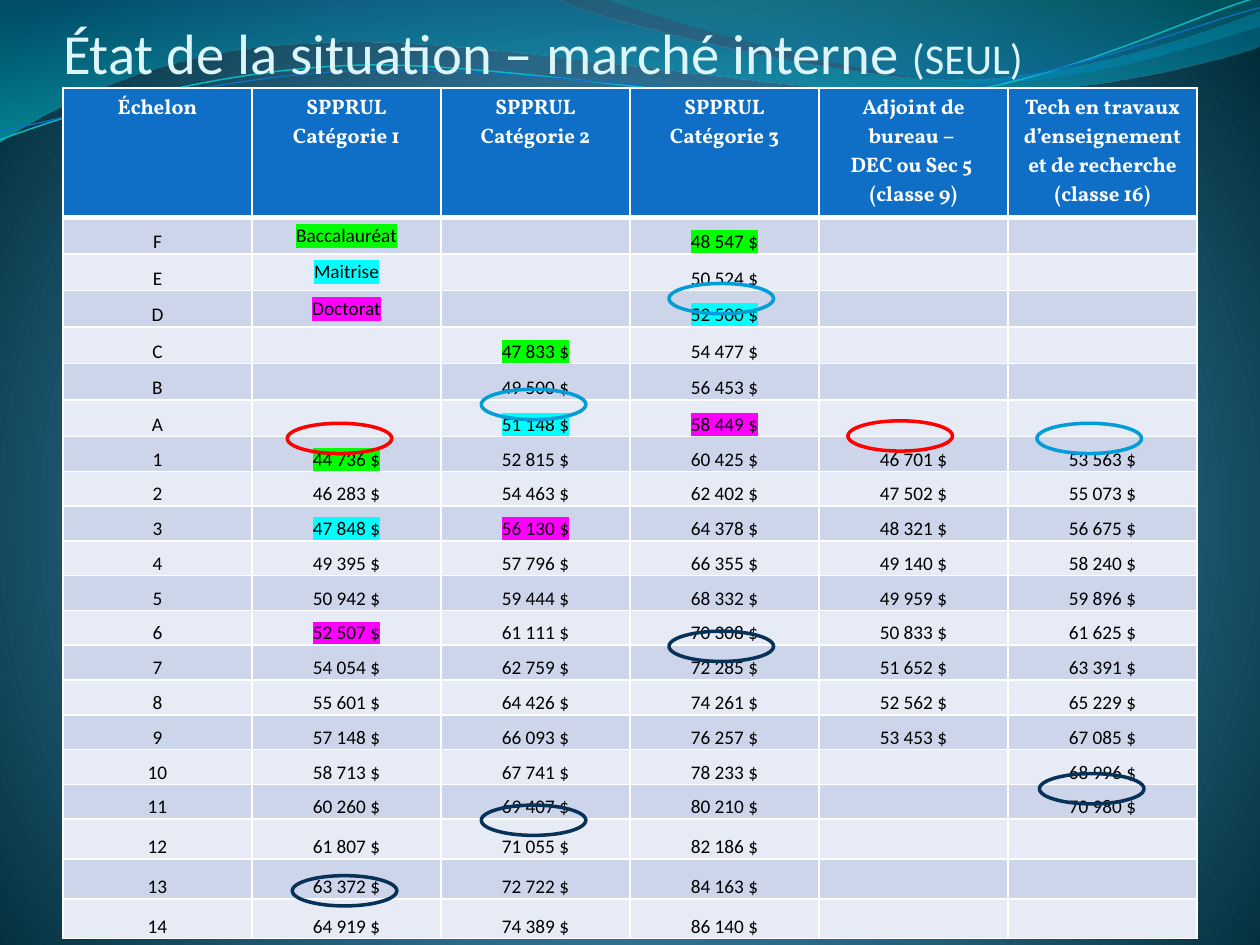
from lxml import etree
from pptx import Presentation
from pptx.dml.color import RGBColor
from pptx.enum.shapes import MSO_SHAPE
from pptx.enum.text import MSO_ANCHOR, PP_ALIGN
from pptx.oxml import parse_xml
from pptx.oxml.ns import nsdecls, qn
from pptx.util import Inches, Pt

WHITE = RGBColor(0xFF, 0xFF, 0xFF)
BLACK = RGBColor(0, 0, 0)
TITLE_COLOR = RGBColor(0xDB, 0xF5, 0xF9)
HEADER_BLUE = RGBColor(0x0F, 0x6F, 0xC6)
BANDS = [RGBColor(0xE7, 0xEB, 0xF5), RGBColor(0xCC, 0xD5, 0xEA)]
TEAL = RGBColor(0x0A, 0xB8, 0xBF)
NAVY = RGBColor(0x07, 0x31, 0x57)
RED = RGBColor(0xFF, 0, 0)
SKY = RGBColor(0, 0x9D, 0xD9)
GREEN = RGBColor(0, 0xFF, 0)
CYAN = RGBColor(0, 0xFF, 0xFF)
MAGENTA = RGBColor(0xFF, 0, 0xFF)

TITLE = [("État de la situation – marché interne ", 32.4), ("(SEUL)", 24.3)]
HEADERS = [
    "Échelon", "SPPRUL\nCatégorie 1", "SPPRUL\nCatégorie 2", "SPPRUL\nCatégorie 3",
    "Adjoint de bureau – \nDEC ou Sec 5 \n(classe 9)",
    "Tech en travaux d’enseignement et de recherche (classe 16)",
]
STEPS = list("FEDCBA") + [str(number) for number in range(1, 15)]
LEGEND = [("Baccalauréat", GREEN), ("Maitrise", CYAN), ("Doctorat", MAGENTA)]
# Column: (first step, salaries)
SALARIES = {
    1: ("1", ["44 736", "46 283", "47 848", "49 395", "50 942", "52 507", "54 054",
              "55 601", "57 148", "58 713", "60 260", "61 807", "63 372", "64 919"]),
    2: ("C", ["47 833", "49 500", "51 148", "52 815", "54 463", "56 130", "57 796",
              "59 444", "61 111", "62 759", "64 426", "66 093", "67 741", "69 407",
              "71 055", "72 722", "74 389"]),
    3: ("F", ["48 547", "50 524", "52 500", "54 477", "56 453", "58 449", "60 425",
              "62 402", "64 378", "66 355", "68 332", "70 308", "72 285", "74 261",
              "76 257", "78 233", "80 210", "82 186", "84 163", "86 140"]),
    4: ("1", ["46 701", "47 502", "48 321", "49 140", "49 959", "50 833", "51 652",
              "52 562", "53 453"]),
    5: ("1", ["53 563", "55 073", "56 675", "58 240", "59 896", "61 625", "63 391",
              "65 229", "67 085", "68 996", "70 980"]),
}
# Column: entry step of each diploma
DIPLOMA_STEPS = {
    1: {"1": GREEN, "3": CYAN, "6": MAGENTA},
    2: {"C": GREEN, "A": CYAN, "3": MAGENTA},
    3: {"F": GREEN, "D": CYAN, "A": MAGENTA},
}
ROW_GROUPS = [(1, 1.02), (6, 1.74), (11, 3.04), (3, 0.95)]  # row count, total height
RINGS = [
    (2.32, 6.95, NAVY), (5.31, 5.01, NAVY), (3.82, 6.39, NAVY), (8.25, 6.14, NAVY),
    (2.28, 3.36, RED), (6.73, 3.34, RED),
    (8.23, 3.36, SKY), (3.82, 3.09, SKY), (5.31, 2.25, SKY),
]
# Start point, then segments: two numbers for a line, six for a Bézier curve
WAVES = [
    ([(0, 0), (4.4, -0.01), (4.76, 0.17, 6.64, 0.63, 7.58, 0.63),
      (8.53, 0.63, 9.58, 0.26, 10, 0.09), (10.01, 0.36),
      (9.83, 0.44, 8.7, 0.76, 7.46, 0.75), (6.22, 0.75, 3.82, 0.28, 2.57, 0.34),
      (1.29, 0.36, 0.46, 0.83, -0.01, 1.13)],
     [(0, "0074A1", 45), (100, "00C6CF", 55)]),
    ([(4.79, -0.01), (5.09, 0.11, 6.82, 0.62, 7.69, 0.65),
      (8.56, 0.69, 9.61, 0.32, 10, 0.21), (10, 0)],
     [(0, "00A1A9", 30), (80, "008BBF", 45)]),
]
STRANDS = [
    ([(0, 1.11), (0.48, 0.93, 1.58, 0.57, 2.77, 0.52),
      (3.95, 0.47, 5.93, 0.89, 7.13, 0.8), (8.33, 0.71, 9.38, 0.15, 9.98, -0.02)],
     TEAL, 0.85),
    ([(0, 1.04), (0.47, 0.96, 1.64, 0.61, 2.83, 0.56),
      (4.03, 0.51, 5.97, 0.84, 7.17, 0.75), (8.36, 0.67, 9.41, 0.21, 10, 0.06)],
     HEADER_BLUE, 0.75),
]
BACKGROUND_STOPS = [(0, "4AA0D6", 100), (25, "4C98C7", 100), (100, "002C38", 100)]
LINEAR = '<a:lin ang="5400000" scaled="0"/>'
CIRCLE = ('<a:path path="circle"><a:fillToRect l="10000" t="110000" r="10000" '
          'b="100000"/></a:path>')


def gradient(stops, direction):
    stops_xml = "".join(
        f'<a:gs pos="{position * 1000}"><a:srgbClr val="{color}">'
        f'<a:alpha val="{alpha * 1000}"/></a:srgbClr></a:gs>'
        for position, color, alpha in stops)
    return parse_xml(f'<a:gradFill {nsdecls("a")} rotWithShape="1">'
                     f'<a:gsLst>{stops_xml}</a:gsLst>{direction}</a:gradFill>')


def replace_solid_fill(parent, fill):
    parent.replace(parent.find(qn("a:solidFill")), fill)


def add_curve(slide, segments, close):
    """Build a freeform through all points, then turn each control triple into a Bézier."""
    points = [(Inches(segment[index]), Inches(segment[index + 1]))
              for segment in segments for index in range(0, len(segment), 2)]
    builder = slide.shapes.build_freeform(*points[0], scale=1)
    builder.add_line_segments(points[1:], close=close)
    shape = builder.convert_to_shape()
    shape.shadow.inherit = False
    lines = iter(list(shape.element.iter(qn("a:lnTo"))))
    for segment in segments[1:]:
        first = next(lines)
        if len(segment) == 6:
            curve = etree.Element(qn("a:cubicBezTo"))
            first.addprevious(curve)
            for line in (first, next(lines), next(lines)):
                curve.append(line[0])
                line.getparent().remove(line)
    return shape


def add_border(cell, side, width):
    properties = cell._tc.get_or_add_tcPr()
    line = etree.SubElement(properties, qn(f"a:ln{side}"), w=str(Pt(width)))
    fill = etree.SubElement(line, qn("a:solidFill"))
    etree.SubElement(fill, qn("a:srgbClr"), val=str(WHITE))


def format_cell(cell, text, size, font, color, bold, fill, bottom_border=1):
    for side in "LRT":
        add_border(cell, side, 1)
    add_border(cell, "B", bottom_border)
    cell.fill.solid()
    cell.fill.fore_color.rgb = fill
    cell.text_frame.text = text
    for paragraph in cell.text_frame.paragraphs:
        paragraph.alignment = PP_ALIGN.CENTER
        for run in paragraph.runs:
            run.font.size, run.font.name, run.font.bold = Pt(size), font, bold
            run.font.color.rgb = color
        if not text:  # an empty cell must not stretch its row
            etree.SubElement(paragraph._p, qn("a:endParaRPr"), sz=str(size * 100))


def highlight(cell, color):
    properties = cell.text_frame.paragraphs[0].runs[0].font._element
    mark = etree.Element(qn("a:highlight"))
    etree.SubElement(mark, qn("a:srgbClr"), val=str(color))
    properties.find(qn("a:solidFill")).addnext(mark)


def add_backdrop(slide):
    slide.background.fill.solid()
    replace_solid_fill(slide.element.find(".//" + qn("p:bgPr")),
                       gradient(BACKGROUND_STOPS, CIRCLE))
    for segments, stops in WAVES:
        wave = add_curve(slide, segments, True)
        wave.line.fill.background()
        wave.fill.solid()
        replace_solid_fill(wave.element.spPr, gradient(stops, LINEAR))
    for segments, color, width in STRANDS:
        strand = add_curve(slide, segments, False)
        strand.fill.background()
        strand.line.color.rgb, strand.line.width = color, Pt(width)


def set_title(slide):
    title = slide.shapes.title
    slide.shapes.element.append(title.element)  # in front of the waves
    title.left, title.top = Inches(0.5), Inches(0.13)
    title.width, title.height = Inches(9), Inches(0.55)
    frame = title.text_frame
    frame.margin_left = frame.margin_right = frame.margin_bottom = 0
    frame.margin_top = Inches(0.05)
    frame.vertical_anchor = MSO_ANCHOR.BOTTOM
    paragraph = frame.paragraphs[0]
    paragraph.alignment = PP_ALIGN.LEFT
    for text, size in TITLE:
        run = paragraph.add_run()
        run.text = text
        run.font.size, run.font.name = Pt(size), "Calibri"
        run.font.color.rgb = TITLE_COLOR


def add_salary_table(slide):
    heights = [total / count for count, total in ROW_GROUPS for _ in range(count)]
    table = slide.shapes.add_table(len(heights), len(HEADERS), Inches(0.5), Inches(0.7),
                                   Inches(9), Inches(sum(heights))).table
    for row, height in zip(table.rows, heights):
        row.height = Inches(height)
    for column, header in enumerate(HEADERS):
        format_cell(table.cell(0, column), header, 12, "Vollkorn", WHITE, True,
                    HEADER_BLUE, bottom_border=3)

    texts = {(row, 0): step for row, step in enumerate(STEPS, 1)}
    marks = {}
    for row, (diploma, color) in enumerate(LEGEND, 1):
        texts[row, 1], marks[row, 1] = diploma, color
    for column, (first_step, amounts) in SALARIES.items():
        for row, amount in enumerate(amounts, STEPS.index(first_step) + 1):
            texts[row, column] = f"{amount} $"
    for column, steps in DIPLOMA_STEPS.items():
        for step, color in steps.items():
            marks[STEPS.index(step) + 1, column] = color

    for row in range(1, len(heights)):
        for column in range(len(HEADERS)):
            cell = table.cell(row, column)
            format_cell(cell, texts.get((row, column), ""), 11, "Calibri", BLACK, False,
                        BANDS[row % 2])
            if (row, column) in marks:
                highlight(cell, marks[row, column])
            if column != 1 or row > len(LEGEND):
                cell.margin_left = cell.margin_right = 0
                cell.margin_top = cell.margin_bottom = 0
                cell.vertical_anchor = MSO_ANCHOR.BOTTOM


def add_rings(slide):
    for left, top, color in RINGS:
        ring = slide.shapes.add_shape(MSO_SHAPE.OVAL, Inches(left), Inches(top),
                                      Inches(0.83), Inches(0.24))
        ring.shadow.inherit = False
        ring.fill.background()
        ring.line.color.rgb, ring.line.width = color, Pt(2)


def main():
    presentation = Presentation()
    presentation.slide_width, presentation.slide_height = Inches(10), Inches(7.5)
    slide = presentation.slides.add_slide(presentation.slide_layouts[5])
    add_backdrop(slide)
    set_title(slide)
    add_salary_table(slide)
    add_rings(slide)
    presentation.save("out.pptx")


if __name__ == "__main__":
    main()
